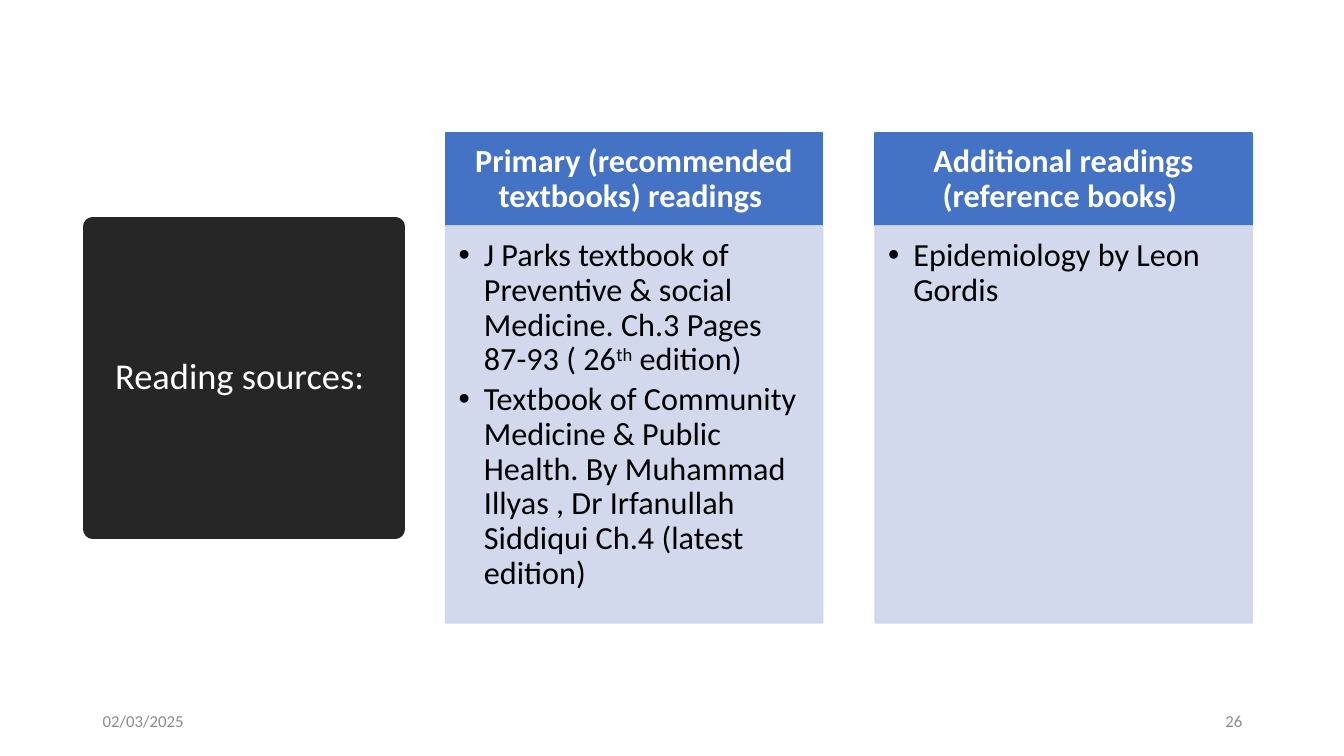
from dataclasses import dataclass

from lxml import etree
from pptx import Presentation
from pptx.dml.color import RGBColor
from pptx.enum import shapes, text
from pptx.oxml import ns
from pptx.util import Inches, Pt


@dataclass(frozen=True)
class Theme:
    font: str = "Calibri"
    dark: str = "262626"
    blue: str = "4472C4"
    pale: str = "CFD5EA"
    white: str = "FFFFFF"
    black: str = "000000"
    gray: str = "8C8C8C"
    title: float = 26
    body: float = 23
    small: float = 12


THEME = Theme()
LEFT, CENTER, RIGHT = (
    text.PP_ALIGN.LEFT, text.PP_ALIGN.CENTER, text.PP_ALIGN.RIGHT)
TOP, MIDDLE = text.MSO_ANCHOR.TOP, text.MSO_ANCHOR.MIDDLE

COL_LEFT, COL_STEP, COL_WIDTH = 4.42, 4.26, 3.74
HEAD_TOP, HEAD_HIGH, BODY_HIGH = 1.32, 0.92, 3.94

# Each item is a list of runs; every second run is superscript.
COLUMNS = [
    ("Primary (recommended textbooks) readings ", [
        ["J Parks textbook of Preventive & social Medicine. "
         "Ch.3 Pages 87-93 ( 26", "th", " edition)"],
        ["Textbook of Community Medicine & Public Health. By Muhammad "
         "Illyas , Dr Irfanullah Siddiqui Ch.4 (latest edition)"],
    ]),
    ("Additional readings (reference books) ", [
        ["Epidemiology by Leon Gordis"],
    ]),
]


def add_box(slide, area, color, width=1):
    box = slide.shapes.add_shape(
        shapes.MSO_SHAPE.RECTANGLE, *map(Inches, area))
    box.shadow.inherit = False
    box.fill.solid()
    box.fill.fore_color.rgb = RGBColor.from_string(color)
    box.line.color.rgb = RGBColor.from_string(color)
    box.line.width = Pt(width)
    return box


def set_alpha(box, percent):
    """Make the fill and line of a box partly transparent."""
    for color in box._element.spPr.iter(ns.qn("a:srgbClr")):
        etree.SubElement(color, ns.qn("a:alpha"), val=str(percent * 1000))


def set_frame(shape, anchor, insets=(0.1, 0.05, 0.1, 0.05)):
    frame = shape.text_frame
    frame.word_wrap = True
    frame.vertical_anchor = anchor
    (frame.margin_left, frame.margin_top,
     frame.margin_right, frame.margin_bottom) = map(Inches, insets)
    return frame


def style(para, size, color, align=LEFT, bold=False):
    para.alignment = align
    para.line_spacing = 0.9
    for run in para.runs:
        run.font.name = THEME.font
        run.font.size = Pt(size)
        run.font.bold = bold
        run.font.color.rgb = RGBColor.from_string(color)


def add_bullet(para):
    props = para._p.get_or_add_pPr()
    props.set("marL", str(Inches(0.25)))
    props.set("indent", str(-Inches(0.25)))
    etree.SubElement(props, ns.qn("a:buFont"), typeface="Arial")
    etree.SubElement(props, ns.qn("a:buChar"), char="•")


def add_title(slide, words):
    box = add_box(slide, (0.92, 2.25, 3, 3), THEME.dark, 13.75)
    etree.SubElement(box.line._get_or_add_ln(), ns.qn("a:round"))
    frame = set_frame(box, MIDDLE)
    frame.text = words
    style(frame.paragraphs[0], THEME.title, THEME.white, CENTER)


def add_head(slide, left, words):
    box = add_box(slide, (left, HEAD_TOP, COL_WIDTH, HEAD_HIGH), THEME.blue)
    frame = set_frame(box, MIDDLE, (0.18, 0.1, 0.18, 0.1))
    frame.text = words
    style(frame.paragraphs[0], THEME.body, THEME.white, CENTER, True)


def add_list(slide, left, items):
    area = (left, HEAD_TOP + HEAD_HIGH, COL_WIDTH, BODY_HIGH)
    box = add_box(slide, area, THEME.pale)
    set_alpha(box, 90)
    frame = set_frame(box, TOP, (0.13, 0.13, 0.18, 0.2))
    for row, parts in enumerate(items):
        para = frame.add_paragraph() if row else frame.paragraphs[0]
        add_bullet(para)
        for spot, part in enumerate(parts):
            run = para.add_run()
            run.text = part
            if spot % 2:
                run._r.get_or_add_rPr().set("baseline", "30000")
        style(para, THEME.body, THEME.black)
        para.space_after = Pt(3.45)


def add_foot(slide, left, words, align):
    box = slide.shapes.add_textbox(*map(Inches, (left, 6.95, 3, 0.4)))
    frame = set_frame(box, MIDDLE)
    frame.text = words
    style(frame.paragraphs[0], THEME.small, THEME.gray, align)
    frame.paragraphs[0].line_spacing = 1.0


def main():
    deck = Presentation()
    deck.slide_width, deck.slide_height = Inches(13.33), Inches(7.5)
    slide = deck.slides.add_slide(deck.slide_layouts[6])
    add_title(slide, "Reading sources: ")
    for col, (head, items) in enumerate(COLUMNS):
        left = COL_LEFT + col * COL_STEP
        add_head(slide, left, head)
        add_list(slide, left, items)
    add_foot(slide, 0.92, "02/03/2025", LEFT)
    add_foot(slide, 9.42, "26", RIGHT)
    deck.save("out.pptx")


if __name__ == "__main__":
    main()
